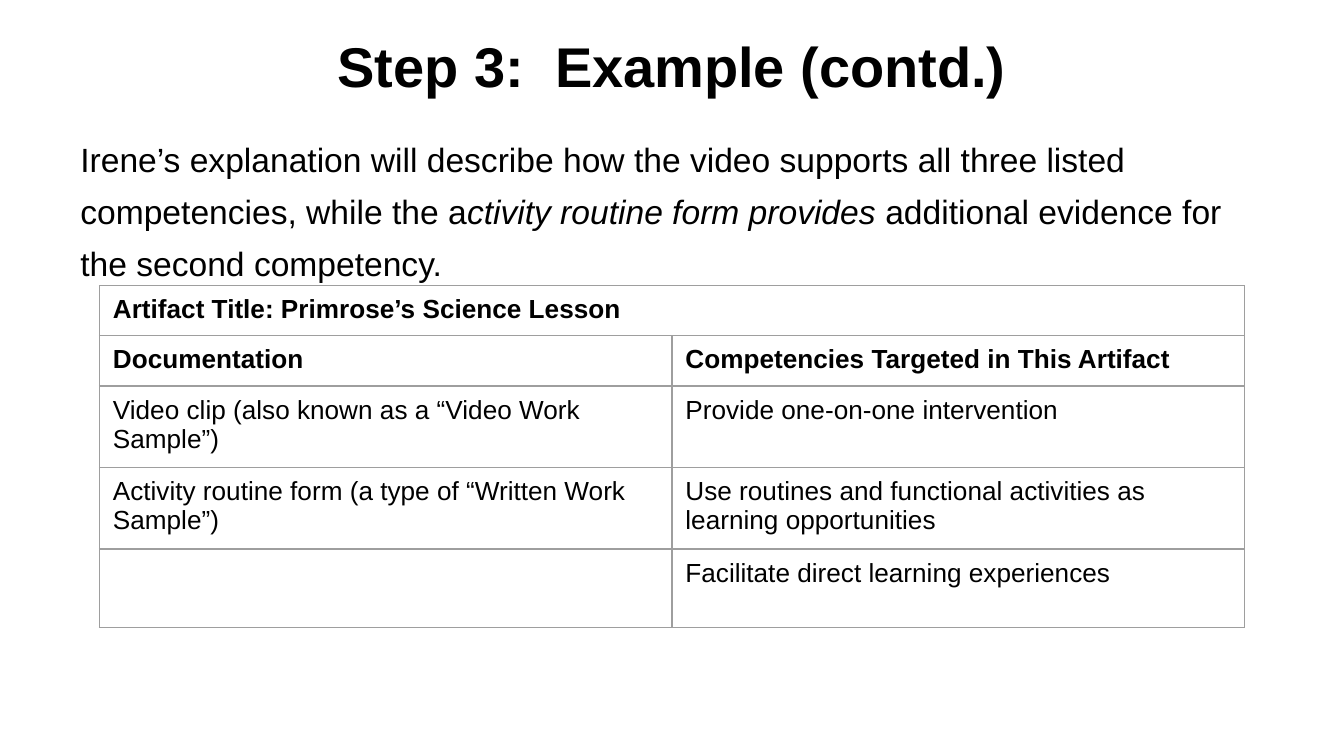
from lxml import etree
from pptx import Presentation
from pptx import util as u
from pptx.dml.color import RGBColor
from pptx.enum import text
from pptx.oxml.ns import qn

PX = 4572
HUES = {"ink": "000000", "rule": "9E9E9E"}
FONT = "Arial"
TITLE = "Step 3:  Example (contd.)"
INTRO = [
    ("Irene’s explanation will describe how the video supports all three listed competencies, while the a", {}),
    ("ctivity routine form provides", {"italic": True}),
    (" additional evidence for the second competency.", {}),
]
ROWS = [
    ("Artifact Title: Primrose’s Science Lesson", ""),
    ("Documentation", "Competencies Targeted in This Artifact"),
    ("Video clip (also known as a “Video Work Sample”)", "Provide one-on-one intervention"),
    ("Activity routine form (a type of “Written Work Sample”)",
     "Use routines and functional activities as learning opportunities"),
    ("", "Facilitate direct learning experiences"),
]
HEADS = 2
TALLS = [64, 64, 64, 62, 117]
WIDE = 852


def px(*nums):
    return [u.Emu(num * PX) for num in nums]


def apply(item, **vals):
    for name, val in vals.items():
        setattr(item, name, val)


def pad(item, side, end):
    apply(item, **dict(zip(
        ("margin_left", "margin_top", "margin_right", "margin_bottom"),
        px(side, end, side, end))))


def write(para, words, size, **vals):
    run = para.add_run()
    run.text = words
    apply(run.font, name=FONT, size=u.Pt(size), **vals)
    run.font.color.rgb = RGBColor.from_string(HUES["ink"])


def place(shape, box):
    apply(shape, **dict(zip(("left", "top", "width", "height"), px(*box))))


def add_title(slide):
    title = slide.shapes.title
    place(title, (55, 23, 1890, 144))
    frame = title.text_frame
    apply(frame, word_wrap=True, auto_size=text.MSO_AUTO_SIZE.NONE,
          vertical_anchor=text.MSO_ANCHOR.BOTTOM)
    pad(frame, 20, 20)
    para = frame.paragraphs[0]
    para.alignment = text.PP_ALIGN.CENTER
    write(para, TITLE, 30, bold=True)


def add_intro(slide):
    frame = slide.shapes.add_textbox(*px(100, 168, 1800, 844)).text_frame
    frame.word_wrap = True
    pad(frame, 20, 20)
    para = frame.paragraphs[0]
    para.line_spacing = 1.3
    for words, style in INTRO:
        write(para, words, 18, **style)


def edge(cell):
    props = cell._tc.get_or_add_tcPr()
    for side in ("a:lnL", "a:lnR", "a:lnT", "a:lnB"):
        line = etree.SubElement(props, qn(side), w=str(u.Pt(0.75)))
        fill = etree.SubElement(line, qn("a:solidFill"))
        etree.SubElement(fill, qn("a:srgbClr"), val=HUES["rule"])


def add_grid(slide):
    box = px(148, 425, 2 * WIDE, sum(TALLS))
    grid = slide.shapes.add_table(len(ROWS), 2, *box).table
    apply(grid, first_row=False, horz_banding=False)
    for col in grid.columns:
        col.width = px(WIDE)[0]
    for r, (tall, row) in enumerate(zip(TALLS, ROWS)):
        grid.rows[r].height = px(tall)[0]
        for c, words in enumerate(row):
            cell = grid.cell(r, c)
            edge(cell)
            cell.fill.background()
            pad(cell, 20, 14)
            if words:
                write(cell.text_frame.paragraphs[0], words, 14, bold=r < HEADS)
    grid.cell(0, 0).merge(grid.cell(0, 1))


def main():
    deck = Presentation()
    deck.slide_width, deck.slide_height = px(2000, 1125)
    slide = deck.slides.add_slide(deck.slide_layouts[5])
    add_title(slide)
    add_intro(slide)
    add_grid(slide)
    deck.save("out.pptx")


if __name__ == "__main__":
    main()
